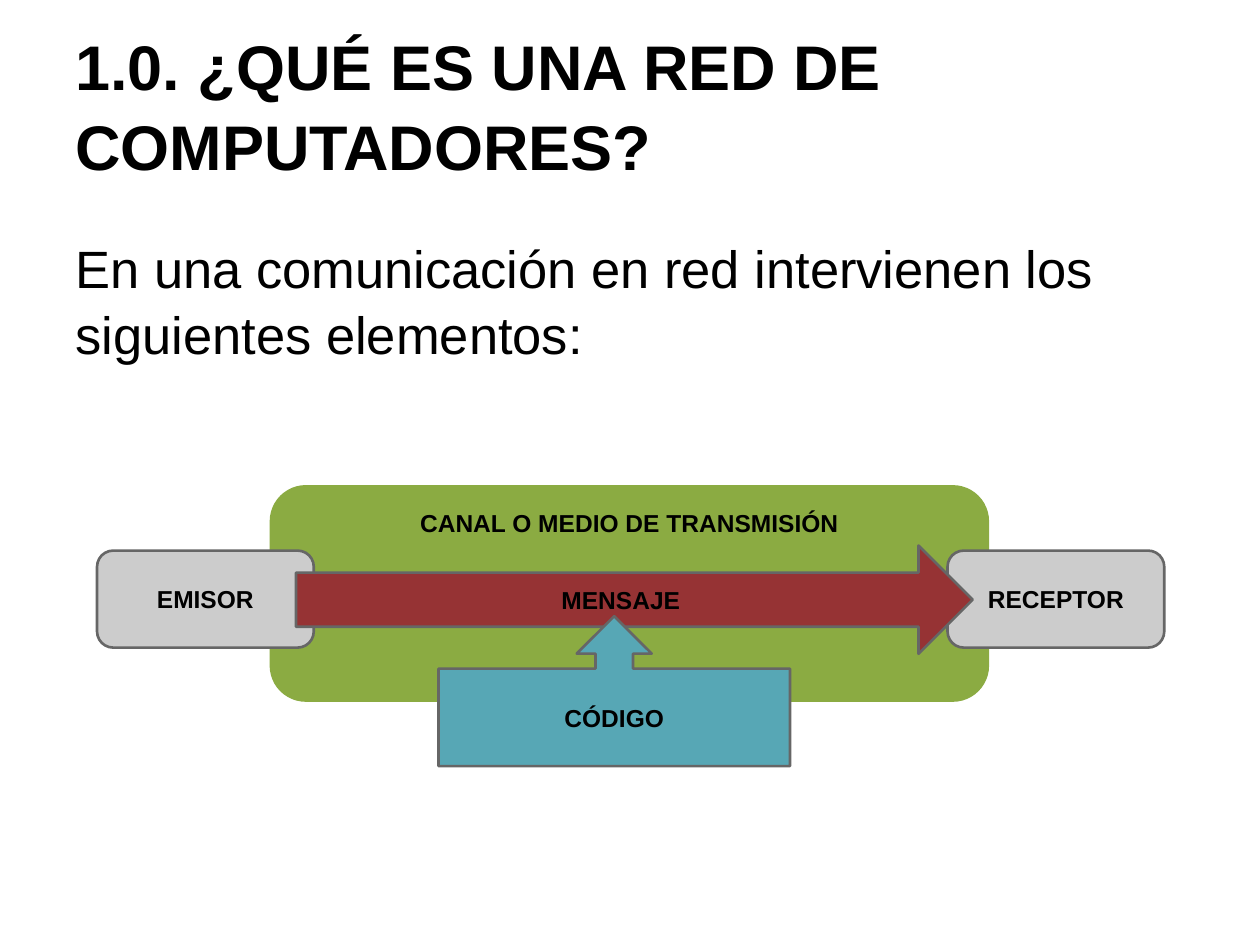
import pptx
import pptx.dml.color
import pptx.enum.shapes
import pptx.enum.text
import pptx.util

Inches = pptx.util.Inches
Shape = pptx.enum.shapes.MSO_SHAPE
Anchor = pptx.enum.text.MSO_ANCHOR
Align = pptx.enum.text.PP_ALIGN


def color(hex_string):
    return pptx.dml.color.RGBColor.from_string(hex_string)


def write_text(shape, text, size, bold, anchor, alignment):
    frame = shape.text_frame
    frame.word_wrap = True
    frame.vertical_anchor = anchor
    frame.margin_left = frame.margin_right = Inches(0.1)
    frame.margin_top = frame.margin_bottom = Inches(0.1)
    paragraph = frame.paragraphs[0]
    paragraph.text = text
    paragraph.alignment = alignment
    paragraph.font.name = "Arial"
    paragraph.font.size = pptx.util.Pt(size)
    paragraph.font.bold = bold
    paragraph.font.color.rgb = color("000000")
    return paragraph


presentation = pptx.Presentation()
presentation.slide_width = Inches(10)
presentation.slide_height = Inches(7.5)
slide = presentation.slides.add_slide(presentation.slide_layouts[6])

# Heading and introduction
title = slide.shapes.add_textbox(Inches(0.5), Inches(0.3), Inches(9), Inches(1.25))
paragraph = write_text(title, "1.0. ¿QUÉ ES UNA RED DE COMPUTADORES?", 36, True,
                       Anchor.BOTTOM, Align.LEFT)
paragraph.line_spacing = 1.05

body = slide.shapes.add_textbox(Inches(0.5), Inches(1.75), Inches(9), Inches(1.32))
paragraph = write_text(body, "En una comunicación en red intervienen los siguientes elementos:",
                       30, False, Anchor.TOP, Align.LEFT)
paragraph.line_spacing = 1.05
paragraph.space_before = pptx.util.Pt(6)

# Communication diagram, from back to front:
# text, preset, left, top, width, height, fill, outline, anchor, adjustments
elements = [
    ("CANAL O MEDIO DE TRANSMISIÓN", Shape.ROUNDED_RECTANGLE, 2.14, 3.85, 5.71, 1.72,
     "8BAB42", None, Anchor.TOP, [0.167]),
    ("EMISOR", Shape.FLOWCHART_ALTERNATE_PROCESS, 0.77, 4.37, 1.72, 0.77,
     "CCCCCC", "666666", Anchor.MIDDLE, []),
    ("RECEPTOR", Shape.FLOWCHART_ALTERNATE_PROCESS, 7.52, 4.37, 1.72, 0.77,
     "CCCCCC", "666666", Anchor.MIDDLE, []),
    ("MENSAJE", Shape.RIGHT_ARROW, 2.35, 4.33, 5.37, 0.86,
     "963334", "666666", Anchor.MIDDLE, [0.5, 0.5]),
    ("CÓDIGO", Shape.UP_ARROW_CALLOUT, 3.48, 4.89, 2.79, 1.19,
     "57A7B5", "666666", Anchor.MIDDLE, [0.25, 0.25, 0.25, 0.65]),
]
for text, preset, left, top, width, height, fill, outline, anchor, adjustments in elements:
    shape = slide.shapes.add_shape(preset, Inches(left), Inches(top),
                                   Inches(width), Inches(height))
    shape.shadow.inherit = False
    for index, value in enumerate(adjustments):
        shape.adjustments[index] = value
    shape.fill.solid()
    shape.fill.fore_color.rgb = color(fill)
    if outline:
        shape.line.color.rgb = color(outline)
        shape.line.width = pptx.util.Pt(1.5)
    else:
        shape.line.fill.background()
    write_text(shape, text, 14, True, anchor, Align.CENTER)

presentation.save("out.pptx")
